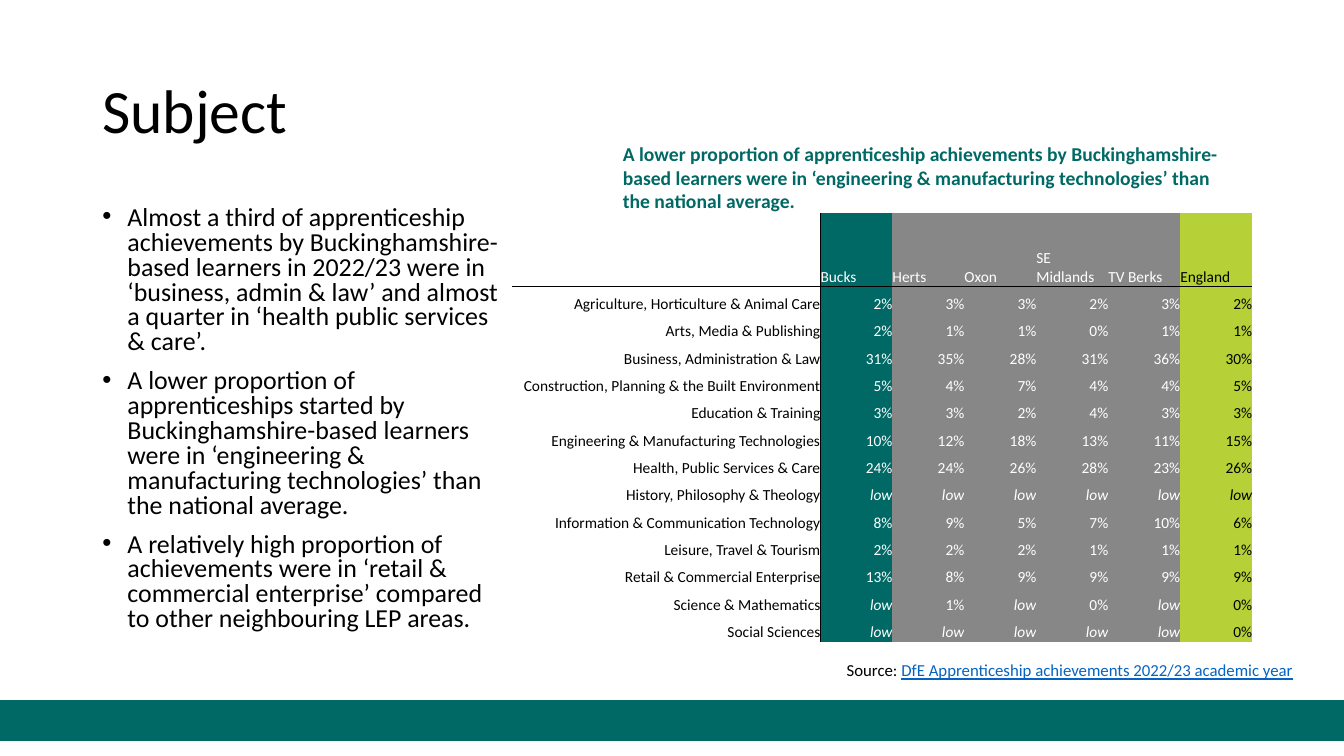
from dataclasses import dataclass

from lxml import etree
from pptx import Presentation
from pptx.dml.color import RGBColor
from pptx.enum.shapes import MSO_SHAPE
from pptx.enum.text import MSO_ANCHOR, PP_ALIGN
from pptx.oxml.ns import qn
from pptx.util import Pt

RECT = MSO_SHAPE.RECTANGLE
TOP, MIDDLE, BOTTOM = MSO_ANCHOR.TOP, MSO_ANCHOR.MIDDLE, MSO_ANCHOR.BOTTOM
LEFT, RIGHT = PP_ALIGN.LEFT, PP_ALIGN.RIGHT


@dataclass(frozen=True)
class Theme:
    font: str = "Calibri"
    teal: str = "006965"
    grey: str = "878787"
    lime: str = "B5D137"
    black: str = "000000"
    white: str = "FFFFFF"
    link: str = "0563C1"
    title: float = 44
    body: float = 18.5
    heading: float = 14
    source: float = 12
    cell: float = 11


THEME = Theme()

BULLETS = [
    "Almost a third of apprenticeship achievements by Buckinghamshire-based learners in 2022/23 "
    "were in ‘business, admin & law’ and almost a quarter in ‘health public services & care’.",
    "A lower proportion of apprenticeships started by Buckinghamshire-based learners were in "
    "‘engineering & manufacturing technologies’ than the national average.",
    "A relatively high proportion of achievements were in ‘retail & commercial enterprise’ "
    "compared to other neighbouring LEP areas.",
]
TABLE_HEADING = (
    "A lower proportion of apprenticeship achievements by Buckinghamshire-based learners were in "
    "‘engineering & manufacturing technologies’ than the national average."
)
AREAS = ["", "Bucks", "Herts", "Oxon", "SE Midlands", "TV Berks", "England"]
SUBJECTS = [
    ("Agriculture, Horticulture & Animal Care", "2% 3% 3% 2% 3% 2%"),
    ("Arts, Media & Publishing", "2% 1% 1% 0% 1% 1%"),
    ("Business, Administration & Law", "31% 35% 28% 31% 36% 30%"),
    ("Construction, Planning & the Built Environment", "5% 4% 7% 4% 4% 5%"),
    ("Education & Training", "3% 3% 2% 4% 3% 3%"),
    ("Engineering & Manufacturing Technologies", "10% 12% 18% 13% 11% 15%"),
    ("Health, Public Services & Care", "24% 24% 26% 28% 23% 26%"),
    ("History, Philosophy & Theology", "low low low low low low"),
    ("Information & Communication Technology", "8% 9% 5% 7% 10% 6%"),
    ("Leisure, Travel & Tourism", "2% 2% 2% 1% 1% 1%"),
    ("Retail & Commercial Enterprise", "13% 8% 9% 9% 9% 9%"),
    ("Science & Mathematics", "low 1% low 0% low 0%"),
    ("Social Sciences", "low low low low low 0%"),
]
COLUMN_STYLES = (
    [(None, THEME.black), (THEME.teal, THEME.white)]
    + [(THEME.grey, THEME.white)] * 4
    + [(THEME.lime, THEME.black)]
)


def set_font(font, size, color, bold=False, italic=False):
    font.name = THEME.font
    font.size = Pt(size)
    font.color.rgb = RGBColor.from_string(color)
    font.bold = bold
    font.italic = italic


def add_band(s, x, y, w, h, color):
    sp = s.shapes.add_shape(RECT, Pt(x), Pt(y), Pt(w), Pt(h))
    sp.shadow.inherit = False
    sp.fill.solid()
    sp.fill.fore_color.rgb = RGBColor.from_string(color)
    sp.line.color.rgb = RGBColor.from_string(color)
    sp.line.width = Pt(1)


def add_text(s, x, y, w, h, paragraphs, size, color, bold=False, align=LEFT, anchor=TOP, spacing=1.0):
    tf = s.shapes.add_textbox(Pt(x), Pt(y), Pt(w), Pt(h)).text_frame
    tf.word_wrap = True
    tf.vertical_anchor = anchor
    for i, text in enumerate(paragraphs):
        p = tf.add_paragraph() if i else tf.paragraphs[0]
        p.add_run().text = text
        p.alignment = align
        p.line_spacing = spacing
        set_font(p.font, size, color, bold)
    return tf


def add_bullets(tf):
    tf.margin_right = Pt(5)
    for p in tf.paragraphs:
        p.space_before = Pt(10)
        pPr = p._p.get_or_add_pPr()
        pPr.set("marL", str(Pt(18)))
        pPr.set("indent", str(-Pt(18)))
        bullet_font = etree.Element(qn("a:buFont"), typeface="Arial")
        bullet = etree.Element(qn("a:buChar"), char="•")
        defaults = pPr.find(qn("a:defRPr"))
        defaults.addprevious(bullet_font)
        defaults.addprevious(bullet)


def set_borders(cell, visible):
    tcPr = cell._tc.get_or_add_tcPr()
    for side in "LRTB":
        ln = etree.SubElement(tcPr, qn(f"a:ln{side}"), w=str(Pt(1)))
        if side in visible:
            fill = etree.SubElement(ln, qn("a:solidFill"))
            etree.SubElement(fill, qn("a:srgbClr"), val=THEME.black)
        else:
            etree.SubElement(ln, qn("a:noFill"))


def style_cell(cell, row, col, text):
    fill, color = COLUMN_STYLES[col]
    sides = {0: "R", 1: "L"}.get(col, "") + {0: "B", 1: "T"}.get(row, "")
    set_borders(cell, sides)
    if fill:
        cell.fill.solid()
        cell.fill.fore_color.rgb = RGBColor.from_string(fill)
    else:
        cell.fill.background()
    cell.margin_left = cell.margin_right = cell.margin_top = cell.margin_bottom = 0
    cell.vertical_anchor = BOTTOM
    p = cell.text_frame.paragraphs[0]
    if text:
        p.add_run().text = text
    p.alignment = RIGHT if row else LEFT
    set_font(p.font, THEME.cell, color, italic=text == "low")


def add_subject_table(s, x, y):
    rows = [AREAS] + [[subject, *values.split()] for subject, values in SUBJECTS]
    widths = [220.3] + [51.4] * 6
    heights = [52.6] + [19.55] * len(SUBJECTS)
    table = s.shapes.add_table(
        len(rows), len(widths), Pt(x), Pt(y), Pt(sum(widths)), Pt(sum(heights))
    ).table
    table.first_row = table.horz_banding = False
    for column, width in zip(table.columns, widths):
        column.width = Pt(width)
    for i, (values, height) in enumerate(zip(rows, heights)):
        table.rows[i].height = Pt(height)
        for j, text in enumerate(values):
            style_cell(table.cell(i, j), i, j, text)


def add_source(s):
    tf = add_text(s, 570.2, 468, 360.7, 21.8, ["Source: "], THEME.source, THEME.black, align=RIGHT)
    r = tf.paragraphs[0].add_run()
    r.text = "DfE Apprenticeship achievements 2022/23 academic year"
    r.font.color.rgb = RGBColor.from_string(THEME.link)
    r.font.underline = True


def main():
    prs = Presentation()
    prs.slide_width, prs.slide_height = Pt(960), Pt(540)
    s = prs.slides.add_slide(prs.slide_layouts[6])
    add_band(s, 0, 500.4, 960, 28.8, THEME.teal)
    add_text(s, 66, 28.8, 828, 104.4, ["Subject"], THEME.title, THEME.black, anchor=MIDDLE, spacing=0.9)
    add_subject_table(s, 365.8, 152)
    add_source(s)
    add_text(s, 437.8, 98, 455.8, 58.3, [TABLE_HEADING], THEME.heading, THEME.teal, bold=True)
    add_bullets(add_text(s, 66, 144, 300.2, 342.7, BULLETS, THEME.body, THEME.black, spacing=0.8))
    prs.save("out.pptx")


if __name__ == "__main__":
    main()
